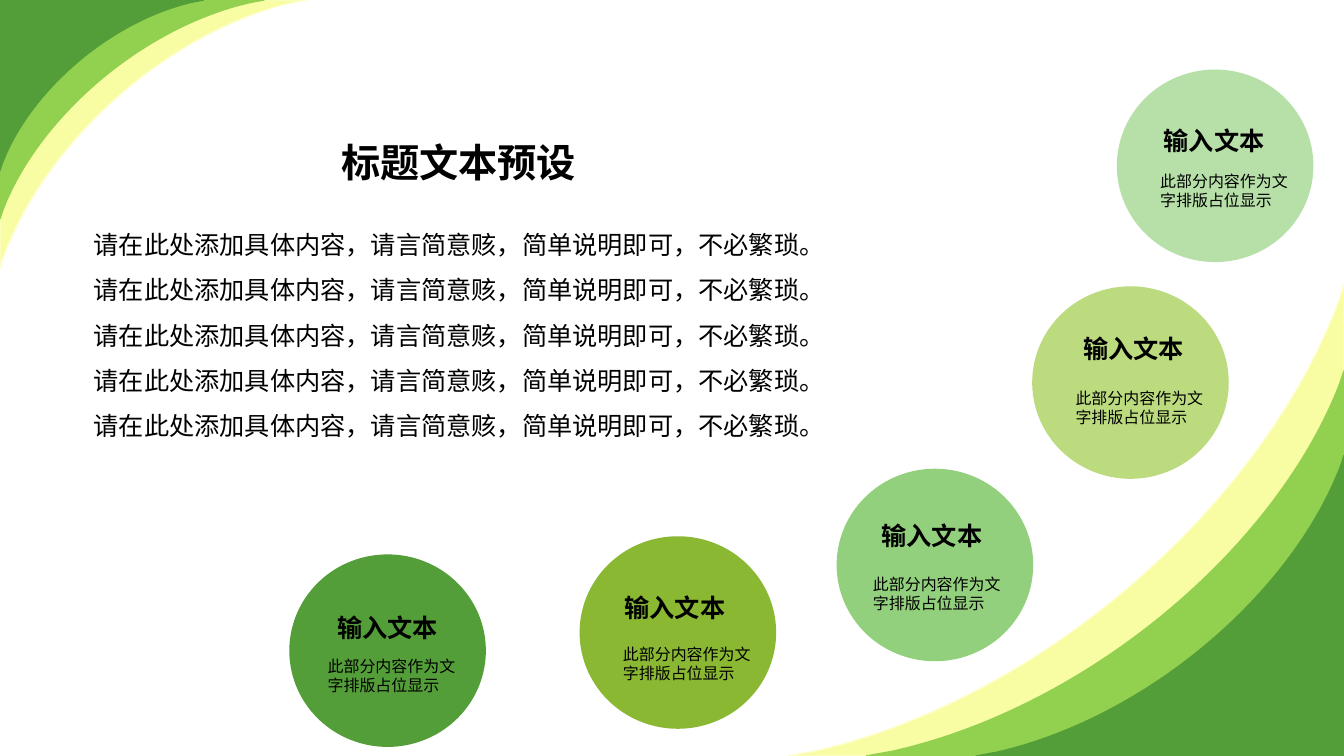
from lxml.etree import SubElement
from pptx import Presentation
from pptx.dml.color import RGBColor
from pptx.enum.shapes import MSO_SHAPE
from pptx.enum.text import MSO_ANCHOR, PP_ALIGN
from pptx.oxml.ns import qn
from pptx.util import Inches, Pt

FONT = "Noto Sans CJK SC"
WIDE, HIGH = 40 / 3, 7.5
# Outline of a corner band, as shares of its width and height from the corner
EDGE = [(1, 0), (0.946, 0.012), (0.724, 0.073), (0.481, 0.233),
        (0.283, 0.473), (0.152, 0.632), (0.06, 0.803), (0.009, 0.966),
        (0, 1), (0, 0)]


def color(code):
    return RGBColor.from_string(code)


def add_text(slide, box, lines, size, bold=False, wrap=True,
             align=PP_ALIGN.LEFT, anchor=MSO_ANCHOR.MIDDLE, space=None):
    frame = slide.shapes.add_textbox(*map(Inches, box)).text_frame
    frame.margin_left = frame.margin_right = 0
    frame.margin_top = frame.margin_bottom = 0
    frame.word_wrap = wrap
    frame.vertical_anchor = anchor
    frame.text = "\n".join(lines)
    for par in frame.paragraphs:
        par.alignment = align
        par.line_spacing = space
        font = par.font
        font.size, font.bold, font.name = Pt(size), bold, FONT
        font.color.rgb = color("000000")
        # East Asian typeface
        props = par._p.pPr.find(qn("a:defRPr"))
        SubElement(props, qn("a:ea")).set("typeface", FONT)


def bend(band):
    """Turn the inner points of a band into two joined curves."""
    lines = list(band._element.iter(qn("a:lnTo")))
    for trio in (lines[1:4], lines[4:7]):
        arc = SubElement(trio[0].getparent(), qn("a:cubicBezTo"))
        trio[0].addprevious(arc)
        for line in trio:
            arc.append(line[0])
            line.getparent().remove(line)


def add_corner(slide, x, y, sign, bands):
    """Stack bands at the corner (x, y); sign points into the slide."""
    for wide, high, fill, line in bands:
        spots = [(Inches(x + sign * wide * u), Inches(y + sign * high * v))
                 for u, v in EDGE]
        form = slide.shapes.build_freeform(*spots[0])
        form.add_line_segments(spots[1:], close=True)
        band = form.convert_to_shape()
        bend(band)
        band.shadow.inherit = False
        band.fill.solid()
        band.fill.fore_color.rgb = color(fill)
        band.line.color.rgb = color(line)
        band.line.width = Pt(1)


def add_body(slide, x, y):
    """Heading over five equal lines."""
    add_text(slide, (x + 1.64, y, 3.96, 0.78), ["标题文本预设"], 28,
             bold=True, wrap=False, align=PP_ALIGN.CENTER)
    line = "请在此处添加具体内容，请言简意赅，简单说明即可，不必繁琐。"
    add_text(slide, (x, y + 0.72, 7.73, 2.62), [line] * 5, 18, space=1.5)


def add_disc(slide, x, y, fill, label, note):
    """Circle with a label and a note, both offset from its top left."""
    disc = slide.shapes.add_shape(MSO_SHAPE.FLOWCHART_CONNECTOR, Inches(x),
                                  Inches(y), Inches(1.95), Inches(1.91))
    disc.shadow.inherit = False
    disc.fill.solid()
    disc.fill.fore_color.rgb = color(fill)
    disc.line.fill.background()
    add_text(slide, (x + label[0], y + label[1], 1.65, 0.38), ["输入文本"], 18,
             bold=True, wrap=False, align=PP_ALIGN.CENTER)
    add_text(slide, (x + note[0], y + note[1], 1.31, 0.59),
             ["此部分内容作为文字排版占位显示"], 11.4, anchor=MSO_ANCHOR.TOP)


def main():
    deck = Presentation()
    deck.slide_width, deck.slide_height = Inches(WIDE), Inches(HIGH)
    slide = deck.slides.add_slide(deck.slide_layouts[6])

    # Corner bands, outermost first
    tones = [("F8FCA2", "FEFFC9"), ("92D050", "92D050"), ("549E39", "549E39")]
    low = [(5.51, 4.68), (4.74, 3.82), (3.65, 2.98)]
    top = [(3.04, 2.66), (2.62, 2.17), (2.02, 1.69)]
    for x, y, sign, sizes in [(WIDE, HIGH, -1, low), (0, 0, 1, top)]:
        add_corner(slide, x, y, sign,
                   [size + tone for size, tone in zip(sizes, tones)])

    # Main text
    add_body(slide, 0.93, 1.22)

    # Arc of discs: place, fill, label offset, note offset
    discs = [
        (11.08, 0.69, "B7E0A8", (0.14, 0.51), (0.43, 1.01)),
        (10.24, 2.84, "BBDB7E", (0.18, 0.43), (0.43, 1.01)),
        (8.3, 4.65, "93D07D", (0.12, 0.47), (0.36, 1.05)),
        (5.75, 5.32, "8AB833", (0.12, 0.52), (0.43, 1.07)),
        (2.87, 5.5, "549E39", (0.15, 0.53), (0.38, 1.01)),
    ]
    for disc in discs:
        add_disc(slide, *disc)

    deck.save("out.pptx")


if __name__ == "__main__":
    main()
